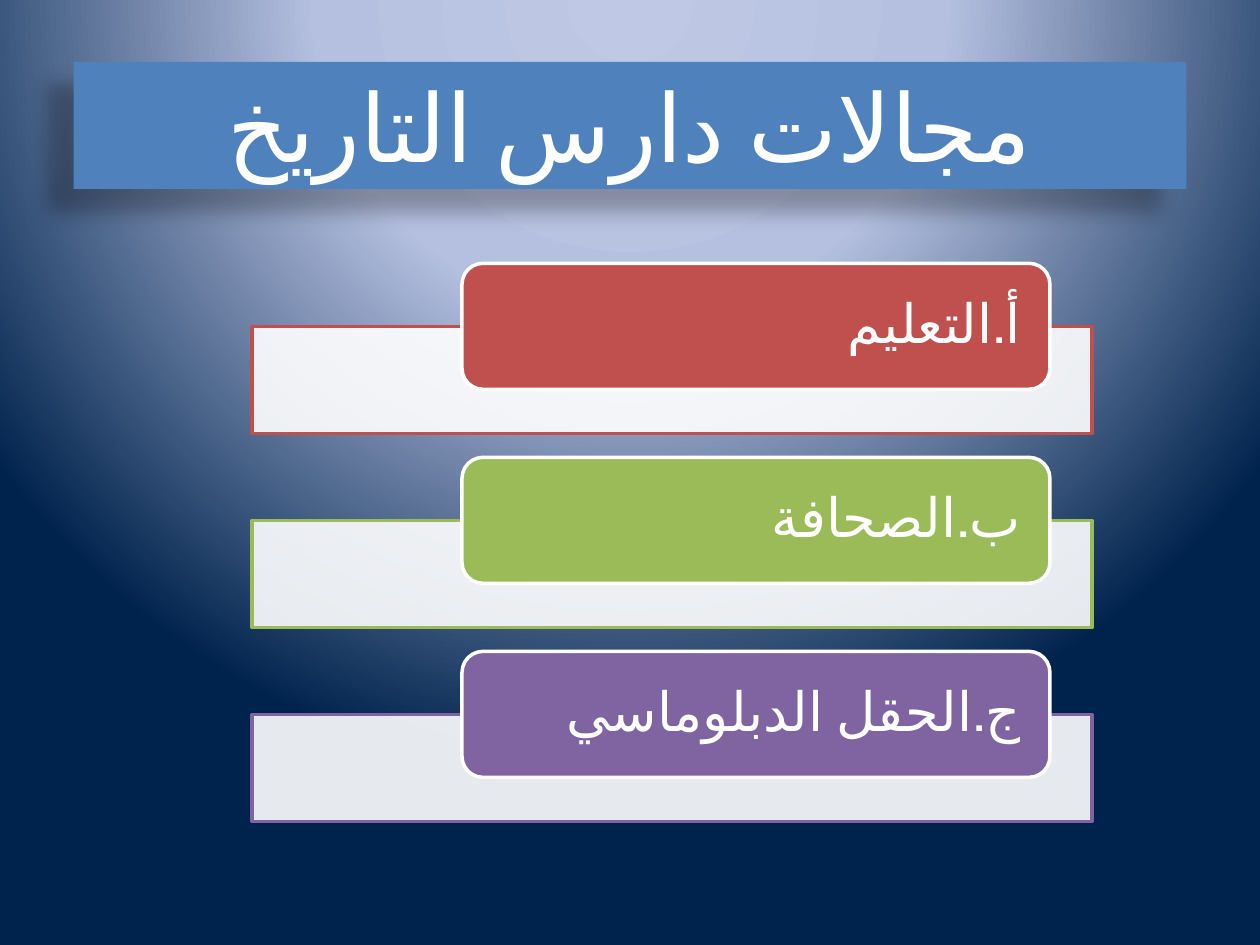
from dataclasses import dataclass

from lxml.etree import SubElement
from pptx import Presentation
from pptx.dml.color import RGBColor
from pptx.enum.lang import MSO_LANGUAGE_ID as Language
from pptx.enum.shapes import MSO_SHAPE as Preset
from pptx.enum.text import MSO_ANCHOR as Anchor, MSO_AUTO_SIZE as AutoSize, PP_ALIGN as Align
from pptx.oxml import parse_xml
from pptx.oxml.ns import nsdecls, qn
from pptx.util import Inches, Pt

WIDTH, HEIGHT = Inches(10), Inches(7.5)
COLUMN, ROW = WIDTH / 30, HEIGHT / 150
FIRST_ROW, ROW_STEP = 41.8, 30.8

WHITE = RGBColor(0xFF, 0xFF, 0xFF)
BLACK = RGBColor(0x00, 0x00, 0x00)
BLUE = RGBColor(0x4F, 0x81, 0xBD)
RED = RGBColor(0xC0, 0x50, 0x4D)
GREEN = RGBColor(0x9B, 0xBB, 0x59)
PURPLE = RGBColor(0x80, 0x64, 0xA2)
GLOW_STOPS = (
    (0, RGBColor(0xBF, 0xC9, 0xE5)),
    (40, RGBColor(0xB5, 0xC0, 0xE0)),
    (100, RGBColor(0x00, 0x23, 0x4D)),
)


@dataclass(frozen=True)
class Box:
    column: float
    row: float
    columns: float
    rows: float

    def lengths(self) -> tuple[int, ...]:
        return (round(self.column * COLUMN), round(self.row * ROW),
                round(self.columns * COLUMN), round(self.rows * ROW))


@dataclass(frozen=True)
class Field:
    letter: str
    name: str
    color: RGBColor


FIELDS = (
    Field("أ", ".التعليم ", RED),
    Field("ب", ".الصحافة", GREEN),
    Field("ج", ".الحقل الدبلوماسي", PURPLE),
)


def paint_background(slide) -> None:
    fill = slide.background.fill
    fill.solid()
    properties = slide.background._cSld.bg.bgPr
    stops = "".join(
        f'<a:gs pos="{share * 1000}"><a:srgbClr val="{color}"/></a:gs>'
        for share, color in GLOW_STOPS)
    gradient = parse_xml(
        f'<a:gradFill {nsdecls("a")} rotWithShape="1"><a:gsLst>{stops}</a:gsLst>'
        '<a:path path="circle"><a:fillToRect l="50000" t="-80000" r="50000" b="180000"/>'
        '</a:path></a:gradFill>')
    properties.replace(properties.find(qn("a:solidFill")), gradient)


def add_panel(slide, preset: Preset, box: Box, fill: RGBColor, line: RGBColor | None = None):
    shape = slide.shapes.add_shape(preset, *box.lengths())
    shape.shadow.inherit = False
    shape.fill.solid()
    shape.fill.fore_color.rgb = fill
    if line is None:
        shape.line.fill.background()
    else:
        shape.line.color.rgb = line
        shape.line.width = Pt(2)
    return shape


def add_run(paragraph, text: str, size: float, font_name: str) -> None:
    run = paragraph.add_run()
    run.text = text
    run.font.size = Pt(size)
    run.font.name = font_name
    run.font.color.rgb = WHITE
    run.font.language_id = Language.ARABIC


def add_title(slide, text: str) -> None:
    shape = add_panel(slide, Preset.RECTANGLE, Box(1.75, 9.8, 26.5, 20.2), BLUE)
    effects = shape._element.spPr.find(qn("a:effectLst"))
    shadow = SubElement(effects, qn("a:outerShdw"), blurRad=str(Pt(11.8)), dist=str(Pt(19.7)),
                        dir=str(141 * 60000), algn="ctr", rotWithShape="0")
    color = SubElement(shadow, qn("a:srgbClr"), val=str(BLACK))
    SubElement(color, qn("a:alpha"), val="28000")
    frame = shape.text_frame
    frame.word_wrap = True
    frame.auto_size = AutoSize.SHAPE_TO_FIT_TEXT
    frame.vertical_anchor = Anchor.TOP
    paragraph = frame.paragraphs[0]
    paragraph.alignment = Align.CENTER
    add_run(paragraph, text, 54, "Roboto")


def add_field(slide, field: Field, row: float) -> None:
    bar = add_panel(slide, Preset.RECTANGLE, Box(6, row + 10, 20, 17), WHITE, field.color)
    color = bar._element.spPr.find(qn("a:solidFill"))[0]
    SubElement(color, qn("a:alpha"), val="90000")
    add_panel(slide, Preset.ROUNDED_RECTANGLE, Box(11, row, 14, 20), field.color, WHITE)

    label = slide.shapes.add_textbox(*Box(11.15, row + 1, 13.7, 18).lengths())
    frame = label.text_frame
    frame.word_wrap = True
    frame.vertical_anchor = Anchor.MIDDLE
    frame.margin_left = frame.margin_right = Inches(0.18)
    frame.margin_top = frame.margin_bottom = 0
    paragraph = frame.paragraphs[0]
    paragraph.alignment = Align.RIGHT
    paragraph.line_spacing = 0.9
    paragraph.space_after = Pt(11)
    paragraph._p.get_or_add_pPr().set("rtl", "1")
    add_run(paragraph, field.letter, 31, "Roboto")
    add_run(paragraph, field.name, 31, "Calibri")


def main() -> None:
    presentation = Presentation()
    presentation.slide_width, presentation.slide_height = WIDTH, HEIGHT
    slide = presentation.slides.add_slide(presentation.slide_layouts[6])
    paint_background(slide)
    add_title(slide, "مجالات دارس التاريخ")
    for index, field in enumerate(FIELDS):
        add_field(slide, field, FIRST_ROW + index * ROW_STEP)
    presentation.save("out.pptx")


if __name__ == "__main__":
    main()
